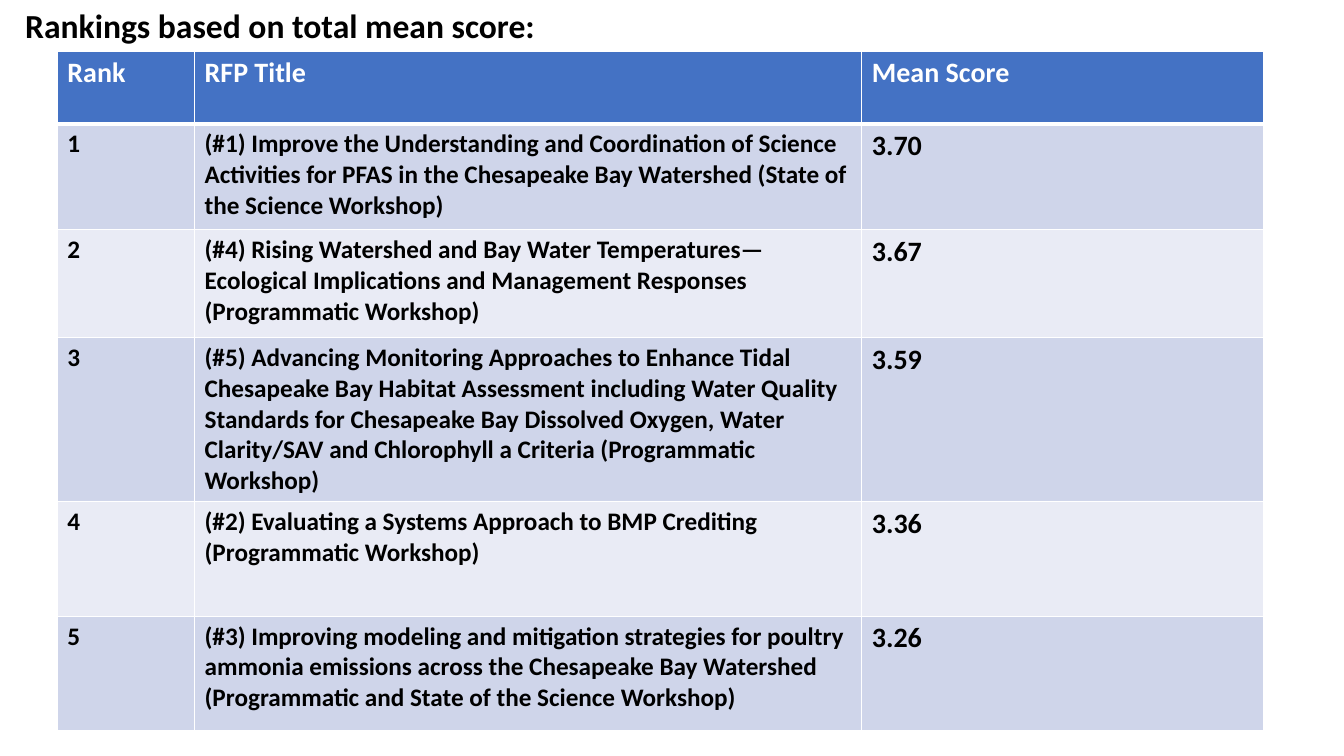
from lxml import etree
from pptx import Presentation
from pptx import util as u
from pptx.dml.color import RGBColor
from pptx.enum import text
from pptx.oxml import ns

HEADING = "Rankings based on total mean score:"
HEADER = ("Rank", "RFP Title", "Mean Score")
RANKINGS = [
    ("1", "(#1) Improve the Understanding and Coordination of Science Activities for PFAS "
          "in the Chesapeake Bay Watershed (State of the Science Workshop)", "3.70"),
    ("2", "(#4) Rising Watershed and Bay Water Temperatures—Ecological Implications and "
          "Management Responses (Programmatic Workshop)", "3.67"),
    ("3", "(#5) Advancing Monitoring Approaches to Enhance Tidal Chesapeake Bay Habitat "
          "Assessment including Water Quality Standards for Chesapeake Bay Dissolved Oxygen, "
          "Water Clarity/SAV and Chlorophyll a Criteria (Programmatic Workshop)", "3.59"),
    ("4", "(#2) Evaluating a Systems Approach to BMP Crediting (Programmatic Workshop)", "3.36"),
    ("5", "(#3) Improving modeling and mitigation strategies for poultry ammonia emissions "
          "across the Chesapeake Bay Watershed (Programmatic and State of the Science "
          "Workshop)", "3.26"),
]
COLUMN_WIDTHS = (98, 476.6, 287.2)
ROW_HEIGHTS = (52, 75.6, 77, 93, 82, 82)
BODY_SIZES = (18, 18, 20)
HEADER_SIZE = 20

FONT = "Calibri"
BLACK = RGBColor(0x00, 0x00, 0x00)
WHITE = RGBColor(0xFF, 0xFF, 0xFF)
BLUE = RGBColor(0x44, 0x72, 0xC4)
BANDS = (RGBColor(0xCF, 0xD5, 0xEA), RGBColor(0xE9, 0xEB, 0xF5))


def write(frame, words, size, color):
    para = frame.paragraphs[0]
    para.alignment = text.PP_ALIGN.LEFT
    span = para.add_run()
    span.text = words
    span.font.name = FONT
    span.font.size = u.Pt(size)
    span.font.bold = True
    span.font.color.rgb = color


def set_borders(cell, top, bottom):
    """Draw white cell borders; top and bottom are widths in points."""
    properties = cell._tc.get_or_add_tcPr()
    for place, (side, width) in enumerate(zip("LRTB", (1, 1, top, bottom))):
        line = etree.Element(ns.qn("a:ln" + side), w=str(u.Pt(width)))
        fill = etree.SubElement(line, ns.qn("a:solidFill"))
        etree.SubElement(fill, ns.qn("a:srgbClr"), val=str(WHITE))
        properties.insert(place, line)


def add_heading(page):
    box = page.shapes.title
    box.left, box.top, box.width, box.height = u.Pt(10.8), 0, u.Pt(514), u.Pt(36)
    frame = box.text_frame
    frame.word_wrap = True
    frame.auto_size = text.MSO_AUTO_SIZE.NONE
    frame.vertical_anchor = text.MSO_ANCHOR.TOP
    write(frame, HEADING, 24, BLACK)


def add_rankings(page):
    rows = [HEADER] + RANKINGS
    table = page.shapes.add_table(
        len(rows), len(HEADER), u.Pt(41), u.Pt(36.5),
        u.Pt(sum(COLUMN_WIDTHS)), u.Pt(sum(ROW_HEIGHTS))).table
    for column, width in zip(table.columns, COLUMN_WIDTHS):
        column.width = u.Pt(width)
    for r, (row, height) in enumerate(zip(rows, ROW_HEIGHTS)):
        table.rows[r].height = u.Pt(height)
        is_header = r == 0
        for c, words in enumerate(row):
            cell = table.cell(r, c)
            cell.fill.solid()
            cell.fill.fore_color.rgb = BLUE if is_header else BANDS[(r - 1) % 2]
            set_borders(cell, top=3 if r == 1 else 1, bottom=3 if is_header else 1)
            write(cell.text_frame, words,
                  HEADER_SIZE if is_header else BODY_SIZES[c],
                  WHITE if is_header else BLACK)


def main():
    deck = Presentation()
    deck.slide_width, deck.slide_height = u.Pt(960), u.Pt(540)
    page = deck.slides.add_slide(deck.slide_layouts.get_by_name("Title Only"))
    add_rankings(page)
    add_heading(page)
    deck.save("out.pptx")


if __name__ == "__main__":
    main()
